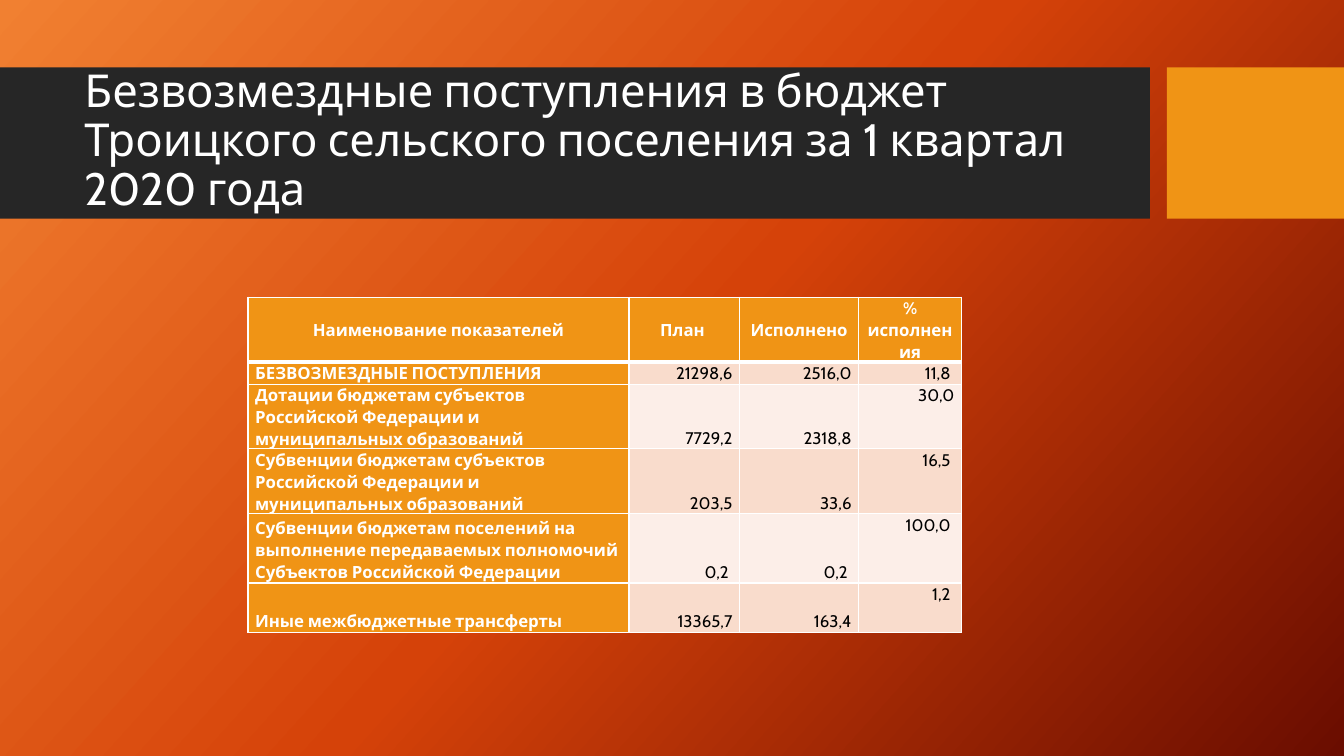
from copy import deepcopy

from lxml.etree import SubElement
from pptx import Presentation
from pptx.dml.color import RGBColor
from pptx.enum.shapes import MSO_SHAPE as Shape
from pptx.enum.text import MSO_ANCHOR as Anchor, PP_ALIGN as Align
from pptx.oxml.ns import qn
from pptx.util import Cm, Pt

FONT = "Cabin"
ORANGE, DARK, WHITE, BLACK = "F09415", "262626", "FFFFFF", "000000"
BANDS = ["F9DCCC", "FCEEE8"]
GRADIENT = [(0, "F18031"), (0.5, "D54209"), (1, "6A0D00")]

TITLE = ("Безвозмездные поступления в бюджет Троицкого сельского "
         "поселения за 1 квартал 2020 года")
COLUMN_WIDTHS = [9.6, 2.79, 3, 2.59]
ROW_HEIGHTS = [1.63, 0.56, 1.32, 1.47, 1.75, 1.24]
ROWS = [
    ["Наименование показателей", "План ", "Исполнено", "%\nисполнения"],
    ["БЕЗВОЗМЕЗДНЫЕ ПОСТУПЛЕНИЯ", "21298,6", "2516,0", "11,8 "],
    ["Дотации бюджетам субъектов Российской Федерации и "
     "муниципальных образований", "7729,2", "2318,8", "30,0"],
    ["Субвенции бюджетам субъектов Российской Федерации и "
     "муниципальных образований", "203,5", "33,6", "16,5 "],
    ["Субвенции бюджетам поселений на выполнение передаваемых полномочий "
     "Субъектов Российской Федерации", "0,2 ", "0,2 ", "100,0 "],
    ["Иные межбюджетные трансферты", "13365,7", "163,4", "1,2 "],
]


def color(hex_text):
    return RGBColor.from_string(hex_text)


def paint_background(page):
    fill = page.background.fill
    fill.gradient()
    fill.gradient_angle = 318
    stop_list = page.element.find(".//" + qn("a:gsLst"))
    stop_list.append(deepcopy(stop_list[0]))
    for stop, (position, hex_text) in zip(fill.gradient_stops, GRADIENT):
        stop.position = position
        stop.color.rgb = color(hex_text)


def add_block(page, left, width, hex_text):
    block = page.shapes.add_shape(
        Shape.RECTANGLE, Cm(left), Cm(1.7), Cm(width), Cm(3.81))
    block.shadow.inherit = False
    block.fill.solid()
    block.fill.fore_color.rgb = color(hex_text)
    block.line.fill.background()


def format_text(frame, size, hex_text, bold, align, spacing):
    for para in frame.paragraphs:
        para.alignment = align
        para.line_spacing = spacing
        for span in para.runs:
            span.font.name = FONT
            span.font.size = Pt(size)
            span.font.bold = bold
            span.font.color.rgb = color(hex_text)


def add_title(page):
    box = page.shapes.add_textbox(Cm(1.88), Cm(2.08), Cm(26.7), Cm(3))
    frame = box.text_frame
    frame.word_wrap = True
    frame.vertical_anchor = Anchor.MIDDLE
    frame.text = TITLE
    format_text(frame, 32.4, WHITE, False, Align.LEFT, 0.9)


def add_borders(cell, top, bottom):
    properties = cell._tc.get_or_add_tcPr()
    for side, width in (("L", 1), ("R", 1), ("T", top), ("B", bottom)):
        line = SubElement(properties, qn("a:ln" + side), w=str(Pt(width)))
        fill = SubElement(line, qn("a:solidFill"))
        SubElement(fill, qn("a:srgbClr"), val=WHITE)


def fill_cell(cell, text, row, column):
    is_header, is_label = row == 0, column == 0
    strong = is_header or is_label
    cell.text_frame.text = text
    cell.margin_left = cell.margin_right = Cm(0.18)
    cell.margin_top = cell.margin_bottom = 0

    # Percentages sit at the top of their cells
    if column == 3:
        cell.vertical_anchor = Anchor.TOP
    else:
        cell.vertical_anchor = Anchor.MIDDLE if is_header else Anchor.BOTTOM

    align = Align.CENTER if is_header else Align.LEFT if is_label else Align.RIGHT
    format_text(cell.text_frame, 12, WHITE if strong else BLACK, strong, align, 1.07)

    # A thick rule separates the header from the body
    add_borders(cell, top=3 if row == 1 else 1, bottom=3 if is_header else 1)
    cell.fill.solid()
    cell.fill.fore_color.rgb = color(ORANGE if strong else BANDS[(row - 1) % 2])


def add_budget_table(page):
    table = page.shapes.add_table(
        len(ROWS), len(COLUMN_WIDTHS), Cm(6.25), Cm(7.49),
        Cm(sum(COLUMN_WIDTHS)), Cm(sum(ROW_HEIGHTS))).table
    for column, width in zip(table.columns, COLUMN_WIDTHS):
        column.width = Cm(width)
    for row, height in zip(table.rows, ROW_HEIGHTS):
        row.height = Cm(height)
    for row, texts in enumerate(ROWS):
        for column, text in enumerate(texts):
            fill_cell(table.cell(row, column), text, row, column)


def main():
    deck = Presentation()
    deck.slide_width, deck.slide_height = Cm(33.87), Cm(19.05)
    page = deck.slides.add_slide(deck.slide_layouts[6])

    # Backdrop and title band
    paint_background(page)
    add_block(page, 0, 28.98, DARK)
    add_block(page, 29.41, 4.46, ORANGE)
    add_title(page)

    # Budget figures
    add_budget_table(page)
    deck.save("out.pptx")


if __name__ == "__main__":
    main()
